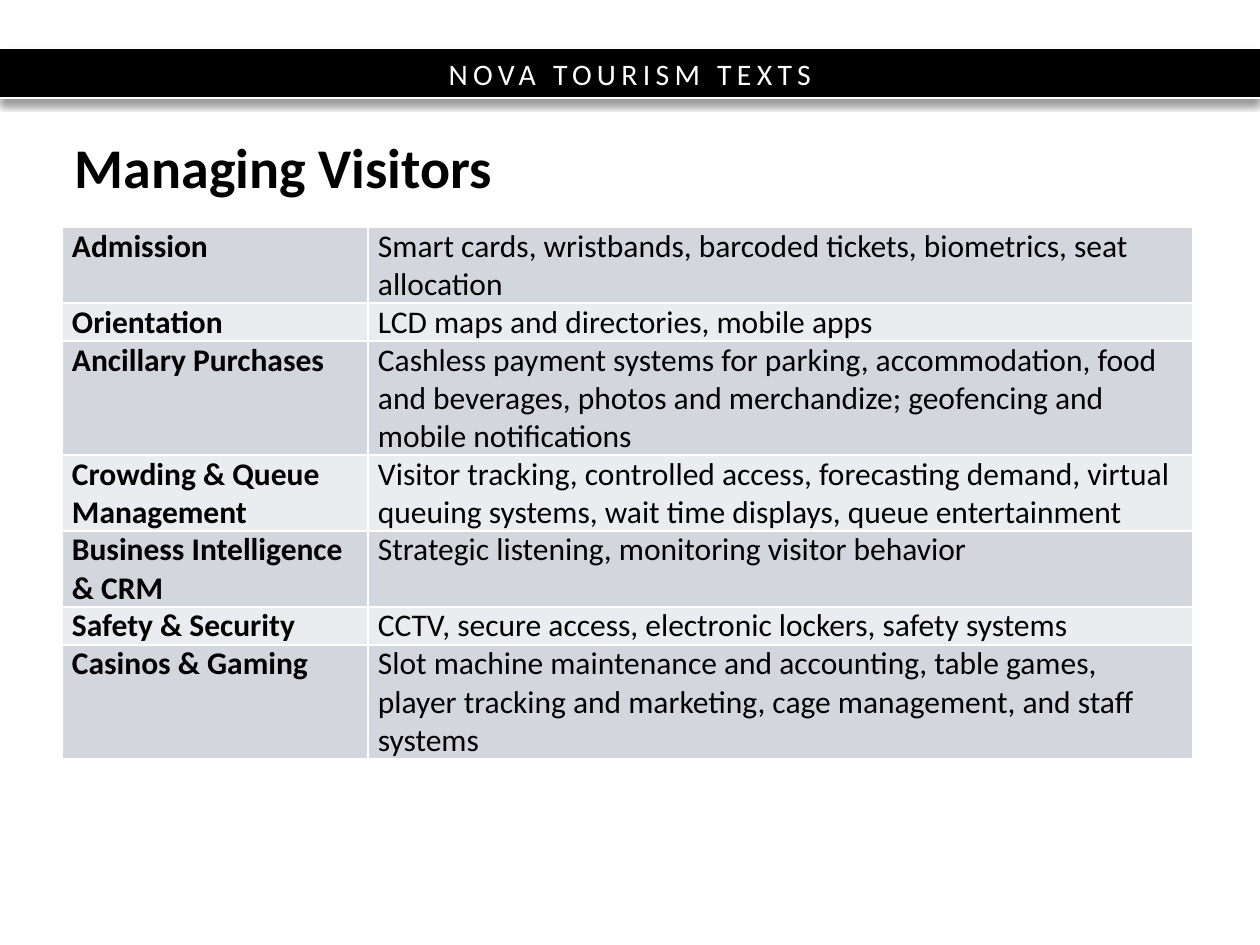
from lxml import etree
from pptx import Presentation, util as u
from pptx.dml.color import RGBColor
from pptx.enum import shapes, text
from pptx.oxml import parse_xml

PX = 914400 / 126
NS = 'xmlns:a="http://schemas.openxmlformats.org/drawingml/2006/main"'


def px(*lengths):
    """Turn pixel lengths into EMU."""
    return [u.Emu(round(length * PX)) for length in lengths]


def write(frame, words, size=18, color="000000", bold=False, margins=(10, 0),
          align=None, anchor=text.MSO_ANCHOR.TOP, spacing=None, line=None):
    side, edge = px(*margins)
    frame.margin_left = frame.margin_right = side
    frame.margin_top = frame.margin_bottom = edge
    frame.word_wrap = True
    frame.vertical_anchor = anchor
    paragraph = frame.paragraphs[0]
    paragraph.alignment = align
    if line:
        paragraph.line_spacing = u.Pt(line)
    run = paragraph.add_run()
    run.text = words
    run.font.name = "Calibri"
    run.font.size = u.Pt(size)
    run.font.bold = bold
    run.font.color.rgb = RGBColor.from_string(color)
    if spacing:
        run.font._element.set("spc", str(spacing * 100))


presentation = Presentation()
presentation.slide_width, presentation.slide_height = px(1260, 945)
slide = presentation.slides.add_slide(presentation.slide_layouts[6])

# Header band with its shadow and two white edges
band = slide.shapes.add_shape(shapes.MSO_SHAPE.RECTANGLE, *px(0, 48, 1260, 51))
band.fill.solid()
band.fill.fore_color.rgb = RGBColor.from_string("000000")
band.line.fill.background()
band._element.spPr.append(parse_xml(
    f'<a:effectLst {NS}><a:outerShdw blurRad="50800" dist="38100" dir="5400000" '
    'rotWithShape="0"><a:srgbClr val="000000"><a:alpha val="40000"/></a:srgbClr>'
    '</a:outerShdw></a:effectLst>'))
write(band.text_frame, "NOVA TOURISM TEXTS", size=17, color="FFFFFF", spacing=3,
      align=text.PP_ALIGN.CENTER, anchor=text.MSO_ANCHOR.MIDDLE)

for y in (48, 98):
    edge = slide.shapes.add_connector(shapes.MSO_CONNECTOR.STRAIGHT, *px(0, y, 1260, y))
    edge.line.color.rgb = RGBColor.from_string("FFFFFF")
    edge.line.width = u.Pt(0.75)
    edge._element.spPr.append(parse_xml(f"<a:effectLst {NS}/>"))

title = slide.shapes.add_textbox(*px(62, 142, 1144, 60))
write(title.text_frame, "Managing Visitors", size=32, bold=True, margins=(13, 6),
      anchor=text.MSO_ANCHOR.MIDDLE, line=32)

# Topic, technologies, number of text lines in the row
rows = [
    ("Admission", "Smart cards, wristbands, barcoded tickets, biometrics, seat allocation", 2),
    ("Orientation", "LCD maps and directories, mobile apps", 1),
    ("Ancillary Purchases",
     "Cashless payment systems for parking, accommodation, food and beverages, "
     "photos and merchandize; geofencing and mobile notifications", 3),
    ("Crowding & Queue Management",
     "Visitor tracking, controlled access, forecasting demand, virtual queuing "
     "systems, wait time displays, queue entertainment", 2),
    ("Business Intelligence & CRM", "Strategic listening, monitoring visitor behavior", 2),
    ("Safety & Security", "CCTV, secure access, electronic lockers, safety systems", 1),
    ("Casinos & Gaming",
     "Slot machine maintenance and accounting, table games, player tracking and "
     "marketing, cage management, and staff systems", 2),
]
LINE_HEIGHT = 38
total_height = LINE_HEIGHT * sum(lines for _, _, lines in rows)
table = slide.shapes.add_table(len(rows), 2, *px(62, 227, 1131, total_height)).table
table.first_row = table.horz_banding = False
for column, width in zip(table.columns, px(306, 825)):
    column.width = width

for index, (topic, technologies, lines) in enumerate(rows):
    table.rows[index].height = px(LINE_HEIGHT * lines)[0]
    for column, words in enumerate((topic, technologies)):
        cell = table.cell(index, column)
        write(cell.text_frame, words, bold=column == 0)
        cell.margin_left, cell.margin_right, cell.margin_top, cell.margin_bottom = px(10, 10, 0, 0)
        properties = cell._tc.get_or_add_tcPr()
        for side in "LRTB":
            properties.append(etree.fromstring(
                f'<a:ln{side} {NS} w="12700"><a:solidFill><a:srgbClr val="FFFFFF"/>'
                f'</a:solidFill></a:ln{side}>'))
        cell.fill.solid()
        cell.fill.fore_color.rgb = RGBColor.from_string("EAECEF" if index % 2 else "D3D6DD")

presentation.save("out.pptx")
